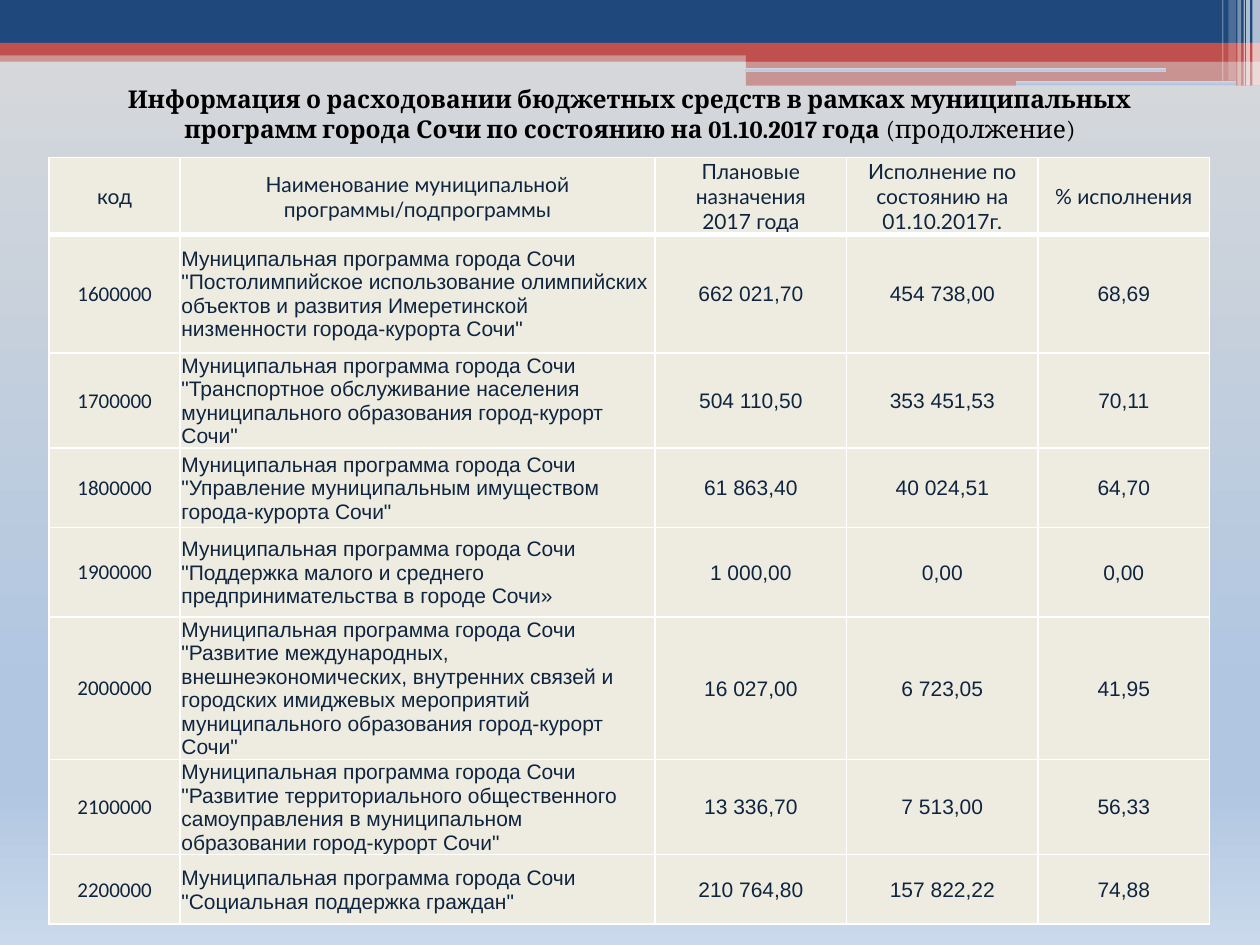
from lxml.etree import SubElement
from pptx import Presentation
from pptx.dml.color import RGBColor
from pptx.enum.shapes import MSO_SHAPE
from pptx.enum.text import MSO_ANCHOR, PP_ALIGN
from pptx.oxml.ns import qn
from pptx.util import Inches, Pt

NAVY, RED, WHITE, CREAM, INK = "1F497D", "C0504D", "FFFFFF", "EEECE1", "0F243E"
SKY = [(0, "D9D9D9"), (74, "B0C6E1"), (83, "B0C6E1"), (100, "CAD9EB")]

# left, top, width, height, colour, opacity in percent
BANDS = [
    (0, 0.4, 10, 0.09, RED, 50),
    (0, 0, 10, 0.34, NAVY, 100),
    (0, 0.34, 10, 0.1, RED, 100),
    (5.92, 0.39, 4.08, 0.1, RED, 100),
    (5.92, 0.48, 4.08, 0.2, RED, 50),
]
SLOTS = [(5.91, 0.54, 3.35, 0.03), (8.06, 0.64, 1.75, 0.04)]
# left, width, height, opacity in percent
STRIPES = [
    (9.94, 0.06, 0.68, 65),
    (9.89, 0.03, 0.68, 65),
    (9.87, 0.01, 0.68, 60),
    (9.82, 0.03, 0.68, 40),
    (9.75, 0.06, 0.64, 20),
    (9.7, 0.01, 0.64, 30),
]

TITLE = [
    ("Информация о расходовании бюджетных средств в рамках муниципальных "
     "программ города Сочи по состоянию на 01.10.2017 года ", True),
    ("(продолжение)", False),
]

HEADER = ("код", "Наименование муниципальной программы/подпрограммы",
          "Плановые\vназначения\v2017 года",
          "Исполнение по состоянию на 01.10.2017г.", "% исполнения")
PREFIX = "Муниципальная программа города Сочи "
PROGRAMS = [
    ("1600000", '"Постолимпийское использование олимпийских объектов и развития '
     'Имеретинской низменности города-курорта Сочи"',
     "662 021,70", "454 738,00", "68,69"),
    ("1700000", '"Транспортное обслуживание населения муниципального образования '
     'город-курорт Сочи"', "504 110,50", "353 451,53", "70,11"),
    ("1800000", '"Управление муниципальным имуществом города-курорта Сочи"',
     "61 863,40", "40 024,51", "64,70"),
    ("1900000", '"Поддержка малого и среднего предпринимательства в городе Сочи»',
     "1 000,00", "0,00", "0,00"),
    ("2000000", '"Развитие международных, внешнеэкономических, внутренних связей и '
     'городских имиджевых мероприятий муниципального образования город-курорт Сочи"',
     "16 027,00", "6 723,05", "41,95"),
    ("2100000", '"Развитие территориального общественного самоуправления в '
     'муниципальном образовании город-курорт Сочи"',
     "13 336,70", "7 513,00", "56,33"),
    ("2200000", '"Социальная поддержка граждан"',
     "210 764,80", "157 822,22", "74,88"),
]
COLUMN_WIDTHS = [1.04, 3.77, 1.52, 1.52, 1.36]
ROW_HEIGHTS = [0.61, 0.94, 0.71, 0.63, 0.71, 1.06, 0.74, 0.55]
CELL_FORMAT = {
    "vertical_anchor": MSO_ANCHOR.MIDDLE,
    "margin_left": Inches(0.01), "margin_right": Inches(0.01),
    "margin_top": Inches(0.01), "margin_bottom": 0,
}


def color(value):
    return RGBColor.from_string(value)


def apply(target, values):
    for name, value in values.items():
        setattr(target, name, value)


def style(span, font, size, ink, bold=False):
    apply(span.font, {"name": font, "size": Pt(size), "bold": bold})
    span.font.color.rgb = color(ink)


def fill_sky(fill, element):
    """Fill with the four-stop gradient, running from top to bottom."""
    fill.gradient()
    fill.gradient_angle = 270
    stops = element.find(".//" + qn("a:gsLst"))
    for stop in list(stops):
        stops.remove(stop)
    for percent, value in SKY:
        stop = SubElement(stops, qn("a:gs"), pos=str(percent * 1000))
        SubElement(stop, qn("a:srgbClr"), val=value)


def add_plain(page, kind, left, top, width, height):
    shape = page.shapes.add_shape(kind, *map(Inches, (left, top, width, height)))
    shape.shadow.inherit = False
    shape.line.fill.background()
    return shape


def add_band(page, left, top, width, height, value, opacity):
    band = add_plain(page, MSO_SHAPE.RECTANGLE, left, top, width, height)
    band.fill.solid()
    band.fill.fore_color.rgb = color(value)
    if opacity < 100:
        tint = band.element.spPr.find(".//" + qn("a:srgbClr"))
        SubElement(tint, qn("a:alpha"), val=str(opacity * 1000))


def add_borders(cell, widths):
    properties = cell._tc.get_or_add_tcPr()
    for side, width in widths.items():
        line = SubElement(properties, qn("a:ln" + side), w=str(Pt(width)))
        SubElement(SubElement(line, qn("a:solidFill")), qn("a:srgbClr"), val=WHITE)


def add_programs_table(page):
    rows = [HEADER] + [(code, PREFIX + name, *values)
                       for code, name, *values in PROGRAMS]
    frame = page.shapes.add_table(
        len(rows), len(HEADER), Inches(0.39), Inches(1.25),
        Inches(sum(COLUMN_WIDTHS)), Inches(sum(ROW_HEIGHTS)))
    table = frame.table
    for column, width in zip(table.columns, COLUMN_WIDTHS):
        column.width = Inches(width)
    for row, height in zip(table.rows, ROW_HEIGHTS):
        row.height = Inches(height)

    for r, texts in enumerate(rows):
        for c, text in enumerate(texts):
            cell = table.cell(r, c)
            apply(cell, CELL_FORMAT)
            add_borders(cell, {"L": 1, "R": 1, "T": 3 if r == 1 else 1,
                               "B": 3 if r == 0 else 1})
            cell.fill.solid()
            cell.fill.fore_color.rgb = color(CREAM)
            para = cell.text_frame.paragraphs[0]
            para.text = text
            para.alignment = PP_ALIGN.LEFT if r and c == 1 else PP_ALIGN.CENTER
            font = "Lato" if r == 0 else "Calibri" if c == 0 else "Arial"
            for span in para.runs:
                style(span, font, 12, INK)


def add_title(page):
    box = page.shapes.add_textbox(*map(Inches, (0.55, 0.62, 8.9, 0.57)))
    box.text_frame.word_wrap = True
    para = box.text_frame.paragraphs[0]
    para.alignment = PP_ALIGN.CENTER
    for text, bold in TITLE:
        span = para.add_run()
        span.text = text
        style(span, "Cambria", 14, "000000", bold)


def main():
    deck = Presentation()
    deck.slide_width, deck.slide_height = Inches(10), Inches(7.5)
    page = deck.slides.add_slide(deck.slide_layouts[6])
    fill_sky(page.background.fill, page.element)
    for band in BANDS:
        add_band(page, *band)
    for place in SLOTS:
        slot = add_plain(page, MSO_SHAPE.ROUNDED_RECTANGLE, *place)
        fill_sky(slot.fill, slot.element)
    for left, width, height, opacity in STRIPES:
        add_band(page, left, 0, width, height, WHITE, opacity)
    add_programs_table(page)
    add_title(page)
    deck.save("out.pptx")


if __name__ == "__main__":
    main()
